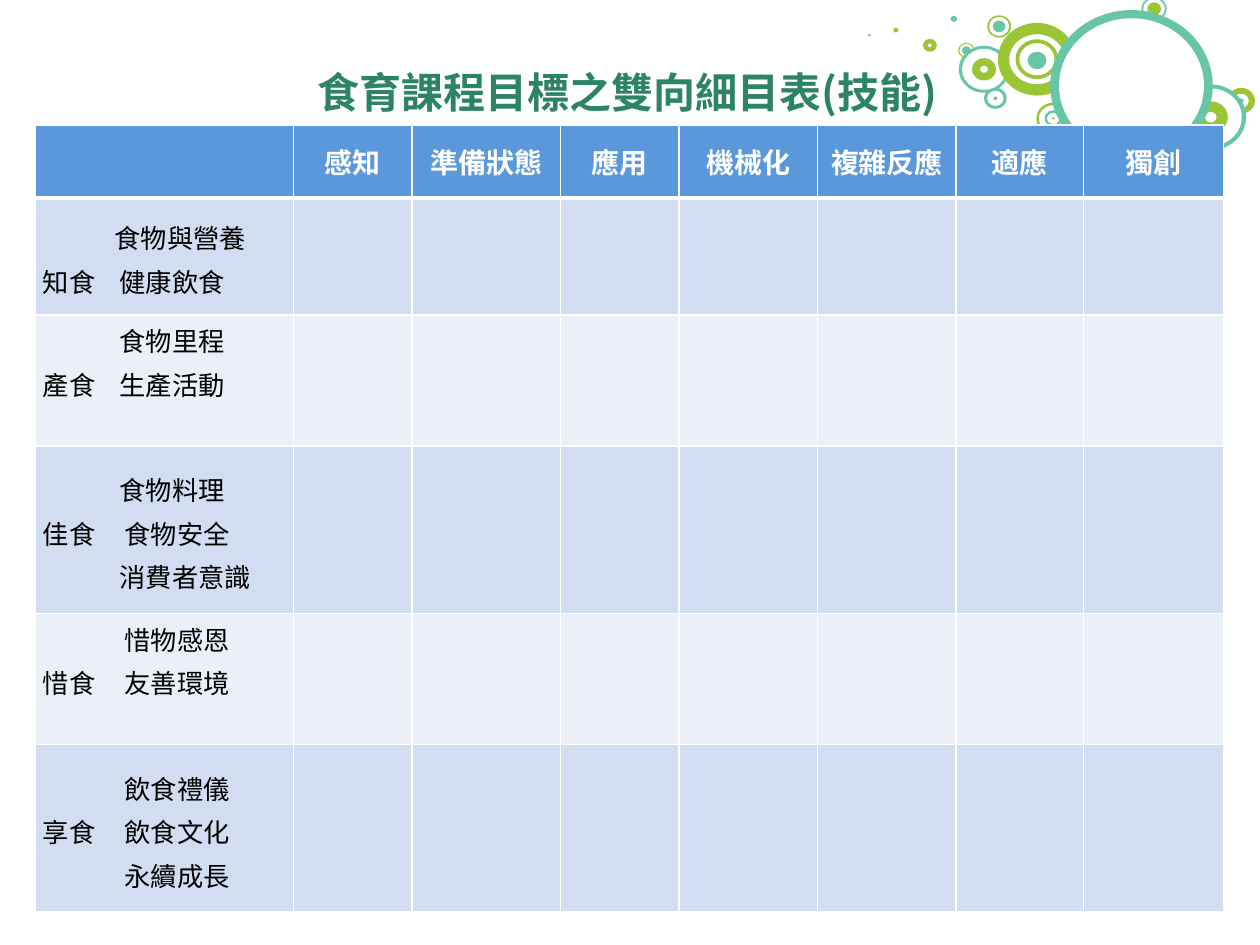
import lxml.etree
import pptx
import pptx.dml.color
import pptx.enum.shapes
import pptx.enum.text
import pptx.oxml.ns
import pptx.util
from pptx.util import Inches

TEAL, GREEN, WHITE, BLACK = "67C5A8", "9CC535", "FFFFFF", "000000"
TITLE_COLOR, HEADER_FILL = "2D8366", "5B98DB"
BAND_FILLS = ["D2DDF1", "EAEFF8"]
HEIGHT_RATIO = 0.93

BACK_TARGETS = [
    (9.16, 0.07, [(0.2, TEAL), (0.17, WHITE), (0.11, GREEN)]),
    (7.38, 0.36, [(0.11, GREEN), (0.03, WHITE)]),
    (7.57, 0.15, [(0.05, TEAL)]),
    (7.11, 0.24, [(0.04, GREEN)]),
    (6.9, 0.28, [(0.02, TEAL)]),
    (7.67, 0.4, [(0.13, GREEN), (0.11, WHITE), (0.07, TEAL)]),
    (7.9, 0.78, [(0.18, TEAL), (0.13, WHITE), (0.03, TEAL)]),
    (7.81, 0.55, [(0.4, TEAL), (0.35, WHITE), (0.19, GREEN), (0.06, WHITE)]),
    (9.85, 0.8, [(0.22, GREEN), (0.12, WHITE), (0.04, TEAL)]),
    (9.61, 0.93, [(0.56, TEAL), (0.49, WHITE), (0.27, GREEN), (0.09, WHITE)]),
    (8.36, 0.94, [(0.02, GREEN)]),
    (8.23, 0.49, [(0.49, WHITE)]),
]
RINGS = [
    (8.36, 0.94, 0.27, 0.02, GREEN),
    (8.36, 0.94, 0.14, 0.02, TEAL),
    (8.23, 0.47, 0.62, 0.09, GREEN),
    (8.23, 0.47, 0.34, 0.03, GREEN),
]
FRONT_TARGETS = [
    (8.23, 0.48, [(0.15, TEAL)]),
    (9.34, 1.22, [(0.2, TEAL), (0.17, WHITE), (0.11, GREEN)]),
    (7.93, 0.21, [(0.19, GREEN), (0.16, WHITE), (0.1, TEAL)]),
    (8.98, 0.68, [(1.29, TEAL), (1.15, WHITE)]),
]

HEADERS = ["", "感知", "準備狀態", "應用", "機械化", "複雜反應", "適應", "獨創"]
COLUMN_WIDTHS = [2.05, 0.94, 1.18, 0.94, 1.1, 1.1, 1.01, 1.11]
HEADER_HEIGHT = 0.58
TOPICS = [
    (0.93, 0, [("", "食物與營養", 0.57), ("知食", "健康飲食", 0.61)]),
    (1.04, 0.34, [("", "食物里程", 0.61), ("產食", "生產活動", 0.61)]),
    (1.33, 0, [("", "食物料理", 0.61), ("佳食", "食物安全", 0.65),
               ("", "消費者意識", 0.61)]),
    (1.04, 0.34, [("", "惜物感恩", 0.65), ("惜食", "友善環境", 0.65)]),
    (1.33, 0, [("", "飲食禮儀", 0.65), ("享食", "飲食文化", 0.65),
               ("", "永續成長", 0.65)]),
]


def rgb(color):
    return pptx.dml.color.RGBColor.from_string(color)


def add_child(parent, tag, **attributes):
    return lxml.etree.SubElement(parent, pptx.oxml.ns.qn(tag), attributes)


def set_font(paragraph, size, color, bold, name="Arial"):
    font = paragraph.font
    font.size = pptx.util.Pt(size)
    font.bold = bold
    font.name = name
    font.color.rgb = rgb(color)


def add_round(slide, kind, center_x, center_y, width, color):
    height = width * HEIGHT_RATIO
    shape = slide.shapes.add_shape(
        kind, Inches(center_x - width / 2), Inches(center_y - height / 2),
        Inches(width), Inches(height))
    shape.shadow.inherit = False
    shape.fill.solid()
    shape.fill.fore_color.rgb = rgb(color)
    shape.line.fill.background()
    return shape


def add_targets(slide, targets):
    for center_x, center_y, discs in targets:
        for width, color in discs:
            add_round(slide, pptx.enum.shapes.MSO_SHAPE.OVAL,
                      center_x, center_y, width, color)


def add_rings(slide):
    for center_x, center_y, width, thickness, color in RINGS:
        ring = add_round(slide, pptx.enum.shapes.MSO_SHAPE.DONUT,
                         center_x, center_y, width, color)
        ring.adjustments[0] = thickness / (width * HEIGHT_RATIO)


def style_cell(cell, fill, margins, bottom_border=1):
    cell.vertical_anchor = pptx.enum.text.MSO_ANCHOR.MIDDLE
    (cell.margin_left, cell.margin_top,
     cell.margin_right, cell.margin_bottom) = map(Inches, margins)
    properties = cell._tc.get_or_add_tcPr()
    for side, width in [("L", 1), ("R", 1), ("T", 1), ("B", bottom_border)]:
        border = add_child(properties, f"a:ln{side}", w=str(pptx.util.Pt(width)))
        border_fill = add_child(border, "a:solidFill")
        add_child(border_fill, "a:srgbClr", val=WHITE)
    cell.fill.solid()
    cell.fill.fore_color.rgb = rgb(fill)


def write_header(cell, text):
    style_cell(cell, HEADER_FILL, (0.07, 0.04, 0.07, 0.04), 3)
    if text:
        cell.text = text
        paragraph = cell.text_frame.paragraphs[0]
        paragraph.alignment = pptx.enum.text.PP_ALIGN.CENTER
        set_font(paragraph, 16, WHITE, True)


def write_topics(cell, lines):
    cell.text = "\n".join(f"{label}\t{topic}" if label else topic
                          for label, topic, indent in lines)
    for paragraph, (label, topic, indent) in zip(cell.text_frame.paragraphs, lines):
        paragraph.line_spacing = 1.15
        properties = paragraph._p.get_or_add_pPr()
        if label:
            tabs = add_child(properties, "a:tabLst")
            add_child(tabs, "a:tab", pos=str(Inches(indent)), algn="l")
        else:
            properties.set("marL", str(Inches(indent)))
        set_font(paragraph, 15, BLACK, False)


def add_goal_table(slide):
    heights = [HEADER_HEIGHT] + [height for height, margin, lines in TOPICS]
    table = slide.shapes.add_table(
        len(heights), len(HEADERS), Inches(0.28), Inches(0.99),
        Inches(sum(COLUMN_WIDTHS)), Inches(sum(heights))).table
    for column, width in zip(table.columns, COLUMN_WIDTHS):
        column.width = Inches(width)
    for row, height in zip(table.rows, heights):
        row.height = Inches(height)
    for cell, text in zip(table.rows[0].cells, HEADERS):
        write_header(cell, text)
    for index, (height, bottom_margin, lines) in enumerate(TOPICS):
        cells = list(table.rows[index + 1].cells)
        for cell in cells:
            style_cell(cell, BAND_FILLS[index % 2], (0.06, 0, 0.06, bottom_margin))
        write_topics(cells[0], lines)


def add_title(slide, text):
    frame = slide.shapes.add_textbox(
        Inches(0.67), Inches(0.6), Inches(8.62), Inches(0.26)).text_frame
    frame.word_wrap = True
    frame.vertical_anchor = pptx.enum.text.MSO_ANCHOR.MIDDLE
    frame.margin_top = frame.margin_bottom = 0
    paragraph = frame.paragraphs[0]
    paragraph.text = text
    paragraph.alignment = pptx.enum.text.PP_ALIGN.CENTER
    set_font(paragraph, 24, TITLE_COLOR, True, "Noto Sans CJK SC")


def main():
    presentation = pptx.Presentation()
    presentation.slide_width = Inches(10)
    presentation.slide_height = Inches(7.5)
    slide = presentation.slides.add_slide(presentation.slide_layouts[6])
    add_targets(slide, BACK_TARGETS)
    add_rings(slide)
    add_targets(slide, FRONT_TARGETS)
    add_goal_table(slide)
    add_title(slide, "食育課程目標之雙向細目表(技能)")
    presentation.save("out.pptx")


if __name__ == "__main__":
    main()
